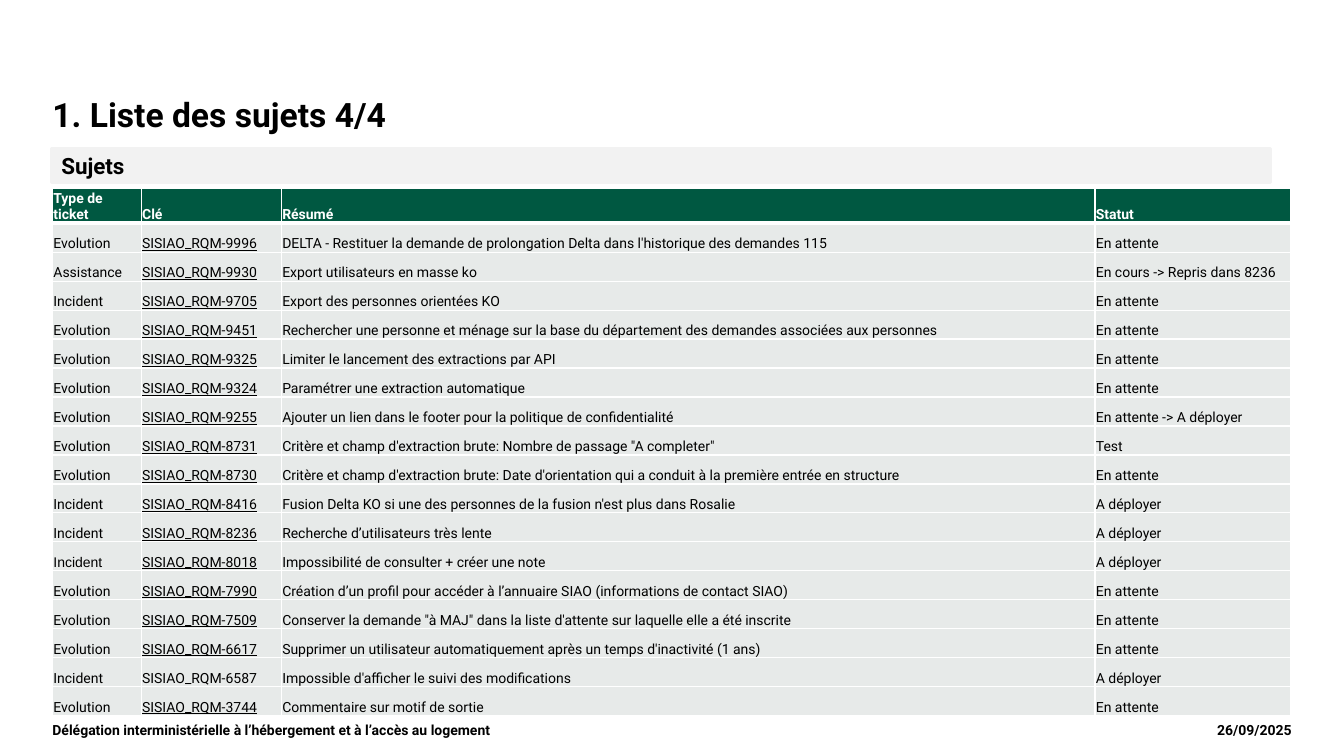
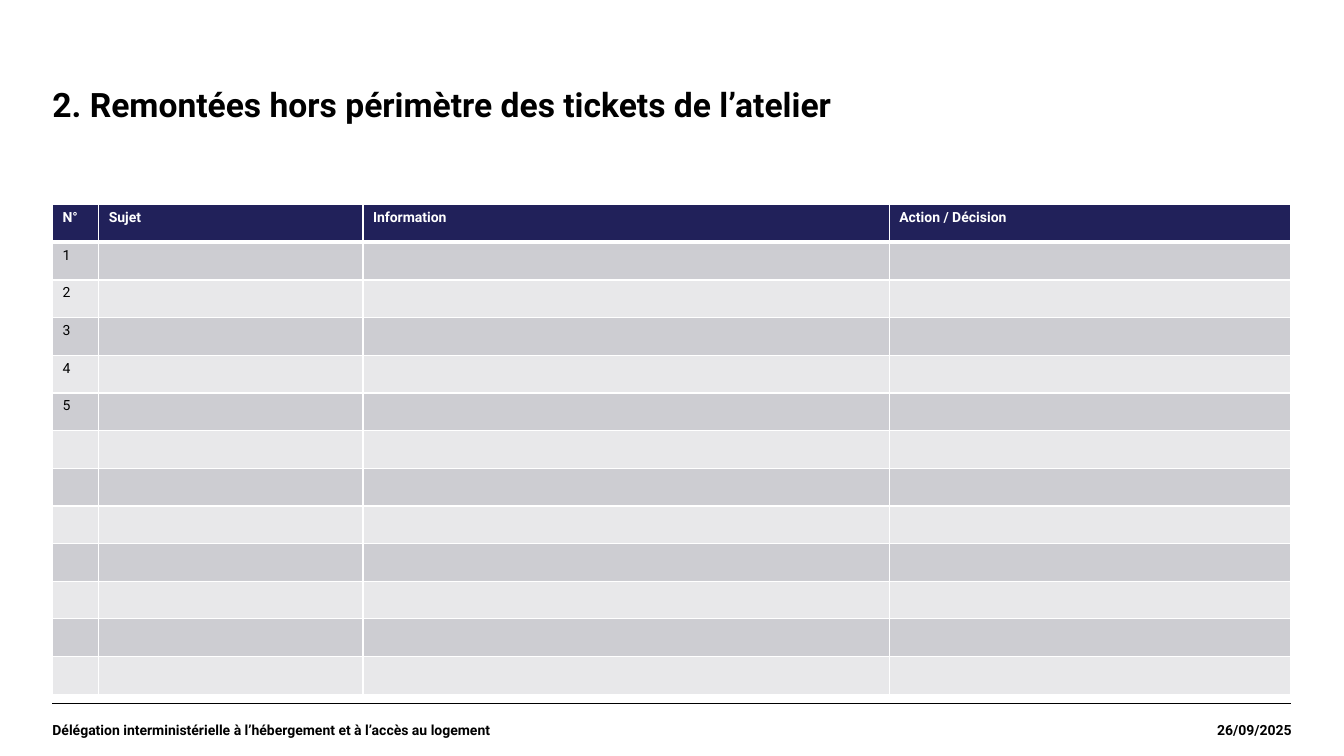
from dataclasses import dataclass

from lxml.etree import SubElement
from pptx import Presentation
from pptx.dml.color import RGBColor
from pptx.enum.shapes import MSO_CONNECTOR, MSO_SHAPE
from pptx.enum.text import MSO_ANCHOR, MSO_AUTO_SIZE, PP_ALIGN
from pptx.oxml.ns import qn
from pptx.util import Emu, Pt

SCALE = 9144


@dataclass(frozen=True)
class Theme:
    font: str = "Roboto"
    black: str = "000000"
    white: str = "FFFFFF"
    band: str = "F2F2F2"
    green: str = "005841"
    mist: str = "E7EAE9"
    navy: str = "21215A"
    dark: str = "CDCDD2"
    light: str = "E8E8EA"
    title: int = 24
    head: int = 16
    body: int = 10


THEME = Theme()
LEFT, WIDTH = 52, 1228
FOOT, DEPTH = 698, 52
TIGHT = {"margin_left": 1, "margin_right": 1, "margin_top": 1, "margin_bottom": 0}
FLUSH = dict.fromkeys(TIGHT, 0)
LOW = {**TIGHT, "vertical_anchor": MSO_ANCHOR.BOTTOM}

TOPICS = [
    ("Type de ticket", "Clé", "Résumé", "Statut"),
    ("Evolution", "SISIAO_RQM-9996", "DELTA - Restituer la demande de prolongation Delta dans l'historique des demandes 115", "En attente"),
    ("Assistance", "SISIAO_RQM-9930", "Export utilisateurs en masse ko", "En cours -> Repris dans 8236"),
    ("Incident", "SISIAO_RQM-9705", "Export des personnes orientées KO", "En attente"),
    ("Evolution", "SISIAO_RQM-9451", "Rechercher une personne et ménage sur la base du département des demandes associées aux personnes", "En attente"),
    ("Evolution", "SISIAO_RQM-9325", "Limiter le lancement des extractions par API", "En attente"),
    ("Evolution", "SISIAO_RQM-9324", "Paramétrer une extraction automatique", "En attente"),
    ("Evolution", "SISIAO_RQM-9255", "Ajouter un lien dans le footer pour la politique de confidentialité", "En attente -> A déployer"),
    ("Evolution", "SISIAO_RQM-8731", "Critère et champ d'extraction brute: Nombre de passage \"A completer\"", "Test"),
    ("Evolution", "SISIAO_RQM-8730", "Critère et champ d'extraction brute: Date d'orientation qui a conduit à la première entrée en structure", "En attente"),
    ("Incident", "SISIAO_RQM-8416", "Fusion Delta KO si une des personnes de la fusion n'est plus dans Rosalie", "A déployer"),
    ("Incident", "SISIAO_RQM-8236", "Recherche d’utilisateurs très lente", "A déployer"),
    ("Incident", "SISIAO_RQM-8018", "Impossibilité de consulter + créer une note", "A déployer"),
    ("Evolution", "SISIAO_RQM-7990", "Création d’un profil pour accéder à l’annuaire SIAO (informations de contact SIAO)", "En attente"),
    ("Evolution", "SISIAO_RQM-7509", "Conserver la demande \"à MAJ\" dans la liste d'attente sur laquelle elle a été inscrite", "En attente"),
    ("Evolution", "SISIAO_RQM-6617", "Supprimer un utilisateur automatiquement après un temps d'inactivité (1 ans)", "En attente"),
    ("Incident", "SISIAO_RQM-6587", "Impossible d'afficher le suivi des modifications", "A déployer"),
    ("Evolution", "SISIAO_RQM-3744", "Commentaire sur motif de sortie", "En attente"),
]
PLAIN = "SISIAO_RQM-6587"
ARIAL = (12, 0)

ISSUES = [("N°", "Sujet", "Information", "Action / Décision")]
ISSUES += [(str(num) if num <= 5 else "", "", "", "") for num in range(1, 13)]


def px(*sizes):
    return [Emu(size * SCALE) for size in sizes]


def rgb(code):
    return RGBColor.from_string(code)


def style(item, form):
    for key, value in form.items():
        if key.startswith("margin"):
            value = px(value)[0]
        setattr(item, key, value)


def write(para, text, size, color=THEME.black, **form):
    run = para.add_run()
    run.text = text
    style(run.font, {"name": THEME.font, "size": Pt(size), "bold": True, **form})
    run.font.color.rgb = rgb(color)


def label(slide, text, box, align):
    frame = slide.shapes.add_textbox(*px(*box)).text_frame
    style(frame, {**FLUSH, "word_wrap": True, "vertical_anchor": MSO_ANCHOR.MIDDLE})
    para = frame.paragraphs[0]
    para.alignment = align
    write(para, text, THEME.body)


def rule(slide):
    line = slide.shapes.add_connector(
        MSO_CONNECTOR.STRAIGHT, *px(LEFT, FOOT, LEFT + WIDTH, FOOT))
    line.line.width = Pt(0.8)
    line.line.color.rgb = rgb(THEME.black)
    SubElement(line._element.spPr, qn("a:effectLst"))


def page(deck, text, top):
    slide = deck.slides.add_slide(deck.slide_layouts[5])
    title = slide.shapes.title
    style(title, dict(zip(("left", "top", "width", "height"), px(LEFT, top, WIDTH, 105))))
    frame = title.text_frame
    style(frame, {**FLUSH, "word_wrap": True, "auto_size": MSO_AUTO_SIZE.NONE,
                  "vertical_anchor": MSO_ANCHOR.TOP})
    para = frame.paragraphs[0]
    style(para, {"alignment": PP_ALIGN.LEFT, "line_spacing": 0.9})
    write(para, text, THEME.title)
    rule(slide)
    label(slide, "Délégation interministérielle à l’hébergement et à l’accès au logement",
          (LEFT, FOOT, 861, DEPTH), PP_ALIGN.LEFT)
    label(slide, "26/09/2025", (1110, FOOT, 171, DEPTH), PP_ALIGN.RIGHT)
    return slide


def band(slide, text, box):
    shape = slide.shapes.add_shape(MSO_SHAPE.RECTANGLE, *px(*box))
    shape.shadow.inherit = False
    shape.fill.solid()
    shape.fill.fore_color.rgb = rgb(THEME.band)
    shape.line.color.rgb = rgb(THEME.band)
    shape.line.width = Pt(2)
    para = shape.text_frame.paragraphs[0]
    para.alignment = PP_ALIGN.LEFT
    write(para, text, THEME.head)


def edge(cell, row):
    props = cell._tc.get_or_add_tcPr()
    wide = {"T": 3 if row == 1 else 1, "B": 3 if row == 0 else 1}
    for side in "LRTB":
        line = SubElement(props, qn("a:ln" + side), w=str(Pt(wide.get(side, 1))))
        fill = SubElement(line, qn("a:solidFill"))
        SubElement(fill, qn("a:srgbClr"), val=THEME.white)


def grid(slide, rows, top, high, cols, head, fills, form, marks):
    frame = slide.shapes.add_table(len(rows), len(cols), *px(LEFT, top, sum(cols), high))
    table = frame.table
    table.horz_banding = False
    for col, wide in zip(table.columns, px(*cols)):
        col.width = wide
    for row, texts in enumerate(rows):
        for col, text in enumerate(texts):
            cell = table.cell(row, col)
            style(cell, form)
            edge(cell, row)
            cell.fill.solid()
            cell.fill.fore_color.rgb = rgb(fills[(row - 1) % len(fills)] if row else head)
            para = cell.text_frame.paragraphs[0]
            if text:
                write(para, text, THEME.body, THEME.black if row else THEME.white,
                      **{"bold": row == 0, **marks.get((row, col), {})})
            else:
                SubElement(para._p, qn("a:endParaRPr"), sz=str(THEME.body * 100))


def main():
    deck = Presentation()
    deck.slide_width, deck.slide_height = px(1333, 750)

    slide = page(deck, "1. Liste des sujets 4/4", 98)
    band(slide, "Sujets", (51, 147, 1209, 34))
    marks = {(row, 1): {"underline": True}
             for row, texts in enumerate(TOPICS) if row and texts[1] != PLAIN}
    marks[ARIAL] = {"name": "Arial"}
    grid(slide, TOPICS, 187, 518, (88, 139, 807, 194),
         THEME.green, [THEME.mist], LOW, marks)

    slide = page(deck, "2. Remontées hors périmètre des tickets de l’atelier", 88)
    grid(slide, ISSUES, 203, 486, (46, 262, 522, 398),
         THEME.navy, [THEME.dark, THEME.light], {}, {})

    deck.save("out.pptx")


if __name__ == "__main__":
    main()
